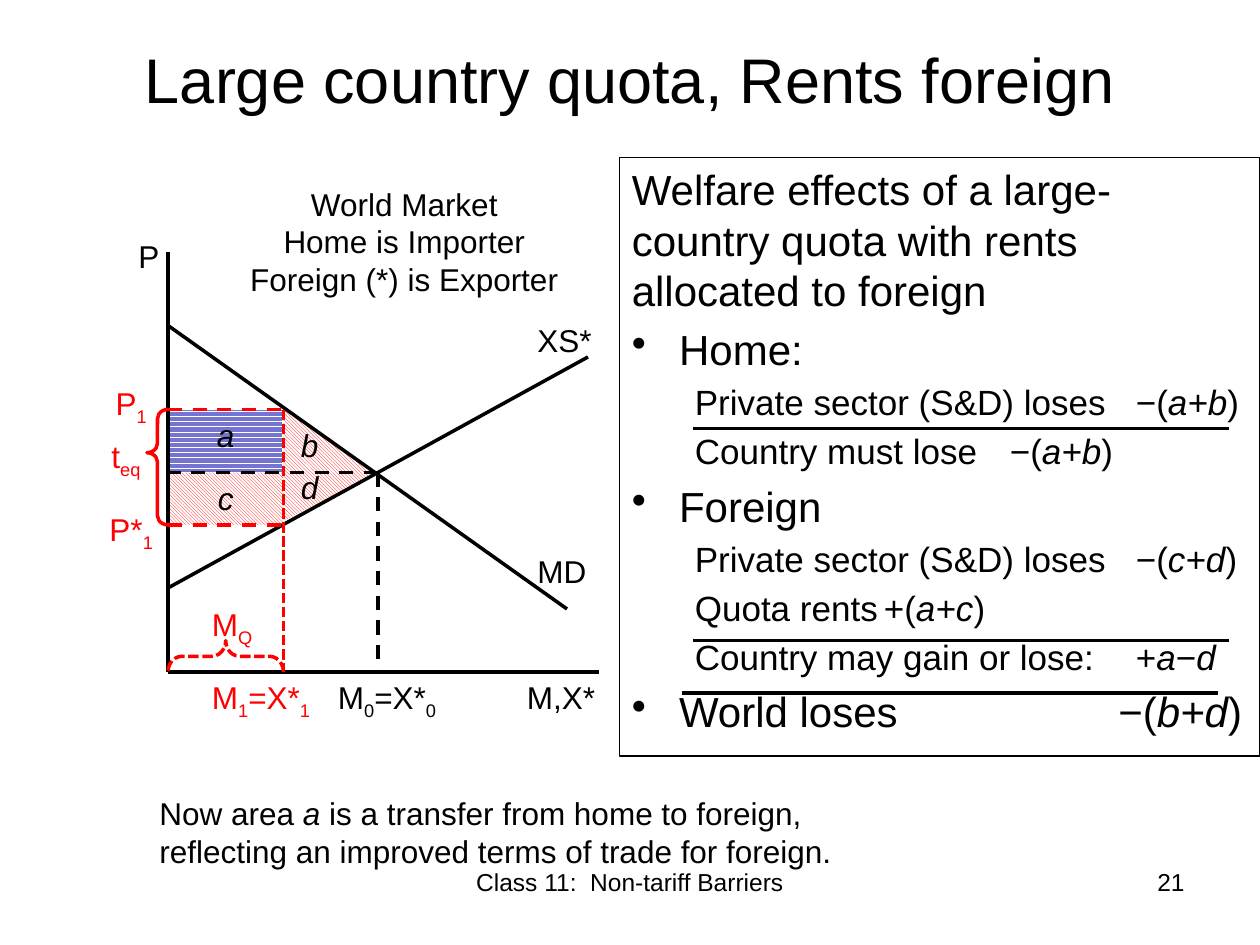
import pptx
import pptx.dml.color
import pptx.enum.dml
import pptx.enum.shapes
import pptx.enum.text
import pptx.oxml.ns
import pptx.util
from lxml import etree

Pt = pptx.util.Pt
RGBColor = pptx.dml.color.RGBColor
SHAPE = pptx.enum.shapes.MSO_SHAPE
DASH = pptx.enum.dml.MSO_LINE
PATTERN = pptx.enum.dml.MSO_PATTERN
ALIGN = pptx.enum.text.PP_ALIGN
ANCHOR = pptx.enum.text.MSO_ANCHOR
qn = pptx.oxml.ns.qn

BLACK = RGBColor(0x00, 0x00, 0x00)
WHITE = RGBColor(0xFF, 0xFF, 0xFF)
RED = RGBColor(0xFF, 0x00, 0x00)
BLUE = RGBColor(0x75, 0x75, 0xD1)

# Points shared by the lines, areas and labels of the diagram
AXIS_X, AXIS_Y = 96, 384
QUOTA_X, FREE_X = 162, 216
HOME_PRICE, FREE_PRICE, FOREIGN_PRICE = 234, 270, 300


def italic(text):
    return text, {"italic": True}


def sub(text):
    return text, {"baseline": "-25000"}


def set_all(target, values):
    for name, value in values.items():
        setattr(target, name, value)


class SlideBuilder:
    font = "Arial"
    line_width = Pt(2)

    def __init__(self, deck):
        self.page = deck.slides.add_slide(deck.slide_layouts[5])

    def add_spans(self, para, spans, size=18, color=BLACK, align=ALIGN.LEFT):
        para.alignment = align
        for item in spans:
            text, extra = (item, {}) if isinstance(item, str) else item
            span = para.add_run()
            span.text = text
            set_all(span.font, {"name": self.font, "size": Pt(size),
                                "italic": extra.get("italic", False)})
            span.font.color.rgb = color
            if "baseline" in extra:
                span._r.get_or_add_rPr().set("baseline", extra["baseline"])

    def title(self, text, left, top, width, height):
        box = self.page.shapes.title
        set_all(box, {"left": Pt(left), "top": Pt(top),
                      "width": Pt(width), "height": Pt(height)})
        set_all(box.text_frame, {"vertical_anchor": ANCHOR.MIDDLE, "word_wrap": True})
        self.add_spans(box.text_frame.paragraphs[0], [text], 36, align=ALIGN.CENTER)

    def text(self, left, top, width, height, *paragraphs, **style):
        box = self.page.shapes.add_textbox(Pt(left), Pt(top), Pt(width), Pt(height))
        frame = box.text_frame
        frame.word_wrap = True
        for index, spans in enumerate(paragraphs):
            para = frame.add_paragraph() if index else frame.paragraphs[0]
            self.add_spans(para, spans, **style)
        return box

    def area(self, kind, left, top, right, bottom, pattern, color, flip=False):
        shape = self.shape(kind, left, top, right - left, bottom - top, flip)
        shape.fill.patterned()
        shape.fill.pattern = pattern
        shape.fill.fore_color.rgb = color
        shape.fill.back_color.rgb = WHITE
        shape.line.fill.background()

    def brace(self, left, top, width, height, point, rotation=0, dash=None):
        shape = self.shape(SHAPE.LEFT_BRACE, left, top, width, height, flip=True)
        shape.rotation = rotation
        shape.adjustments[0] = 0.44
        shape.adjustments[1] = point
        shape.fill.background()
        self.stroke(shape.line, RED, dash)

    def shape(self, kind, left, top, width, height, flip=False):
        shape = self.page.shapes.add_shape(kind, Pt(left), Pt(top), Pt(width), Pt(height))
        shape.shadow.inherit = False
        if flip:
            shape._element.spPr.find(qn("a:xfrm")).set("flipV", "1")
        return shape

    def stroke(self, line, color, dash):
        set_all(line, {"width": self.line_width, "dash_style": dash})
        line.color.rgb = color

    def line(self, x1, y1, x2, y2, color=BLACK, dash=None):
        connector = self.page.shapes.add_connector(
            pptx.enum.shapes.MSO_CONNECTOR.STRAIGHT, Pt(x1), Pt(y1), Pt(x2), Pt(y2))
        self.stroke(connector.line, color, dash)
        etree.SubElement(connector._element.spPr, qn("a:effectLst"))

    def welfare_list(self, left, top, width, height, rows):
        # Kind of row: size, left margin, first-line indent, tab stop, bullet
        kinds = {"intro": (24, 0, 0, None, False),
                 "bullet": (24, 27, -27, 278, True),
                 "entry": (20, 36, 0, 284, False)}
        box = self.text(left, top, width, height)
        box.line.color.rgb = BLACK
        box.line.width = Pt(0.75)
        for index, (kind, *spans) in enumerate(rows):
            size, margin, indent, tab, bullet = kinds[kind]
            frame = box.text_frame
            para = frame.add_paragraph() if index else frame.paragraphs[0]
            para.space_before = Pt(size * 0.2)
            self.add_spans(para, spans, size)
            props = para._p.get_or_add_pPr()
            props.set("marL", str(Pt(margin)))
            props.set("indent", str(Pt(indent)))
            if bullet:
                etree.SubElement(props, qn("a:buChar"), char="•")
            if tab:
                tabs = etree.SubElement(props, qn("a:tabLst"))
                etree.SubElement(tabs, qn("a:tab"), pos=str(Pt(tab)), algn="l")


def main():
    deck = pptx.Presentation()
    set_all(deck, {"slide_width": Pt(720), "slide_height": Pt(540)})
    slide = SlideBuilder(deck)
    slide.title("Large country quota, Rents foreign", 36, 0, 648, 90)

    # Welfare areas
    hatch = PATTERN.DARK_DOWNWARD_DIAGONAL
    slide.area(SHAPE.RECTANGLE, AXIS_X, FREE_PRICE, QUOTA_X, FOREIGN_PRICE, hatch, RED)
    slide.area(SHAPE.RECTANGLE, AXIS_X, HOME_PRICE, QUOTA_X - 1, FREE_PRICE,
               PATTERN.DARK_HORIZONTAL, BLUE)
    slide.area(SHAPE.RIGHT_TRIANGLE, QUOTA_X, FREE_PRICE, FREE_X, FOREIGN_PRICE - 2,
               hatch, RED, flip=True)
    slide.area(SHAPE.RIGHT_TRIANGLE, QUOTA_X, HOME_PRICE, FREE_X, FREE_PRICE, hatch, RED)

    # Axes, supply and demand
    slide.line(AXIS_X, AXIS_Y, 342, AXIS_Y)
    slide.line(AXIS_X, AXIS_Y, AXIS_X, 144)
    slide.line(AXIS_X, 336, 336, 204)
    slide.line(324, 348, AXIS_X, 186)

    # Free-trade and quota guides
    slide.line(FREE_X, FREE_PRICE, FREE_X, AXIS_Y, dash=DASH.DASH)
    slide.line(FREE_X, FREE_PRICE, AXIS_X, FREE_PRICE, dash=DASH.DASH)
    slide.line(QUOTA_X, HOME_PRICE, QUOTA_X, AXIS_Y, RED, DASH.SQUARE_DOT)
    for price in (HOME_PRICE, FOREIGN_PRICE):
        slide.line(AXIS_X, price, QUOTA_X, price, RED, DASH.DASH)
    slide.brace(84, HOME_PRICE, 12, 66, 0.625)
    slide.brace(120, 342, 18, 66, 0.5, rotation=90, dash=DASH.SQUARE_DOT)

    # Black labels
    for left, top, label in ((72, 132, "P"), (300, 312, "MD"),
                             (300, 180, "XS*"), (294, 384, "M,X*")):
        slide.text(left, top, 54, 29, [label])
    slide.text(114, 102, 234, 73, ["World Market"], ["Home is Importer"],
               ["Foreign (*) is Exporter"], align=ALIGN.CENTER)
    for left, top, letter in ((114, 234, "a"), (162, 240, "b"),
                              (114, 270, "c"), (162, 264, "d")):
        slide.text(left, top, 30, 29, [italic(letter)], align=ALIGN.CENTER)

    # Price and quantity labels with subscripts
    for left, top, width, letter, index in ((54, 216, 42, "P", "1"),
                                            (54, 288, 42, "P*", "1"),
                                            (48, 246, 48, "t", "eq")):
        slide.text(left, top, width, 29, [letter, sub(index)], color=RED, align=ALIGN.CENTER)
    slide.text(114, 342, 72, 29, ["M", sub("Q")], color=RED)
    for left, index, color in ((114, "1", RED), (186, "0", BLACK)):
        slide.text(left, 384, 78, 29, ["M", sub(index), "=X*", sub(index)], color=color)

    # Welfare effects, with the lines above the totals
    slide.welfare_list(354, 90, 366, 342, [
        ("intro", "Welfare effects of a large-country quota with rents allocated to foreign"),
        ("bullet", "Home:"),
        ("entry", "Private sector (S&D) loses\t−(", italic("a+b"), ")"),
        ("entry", "Country must lose\t−(", italic("a+b"), ")"),
        ("bullet", "Foreign"),
        ("entry", "Private sector (S&D) loses\t−(", italic("c+d"), ")"),
        ("entry", "Quota rents\t+(", italic("a+c"), ")"),
        ("entry", "Country may gain or lose:\t+", italic("a"), "−", italic("d")),
        ("bullet", "World loses\t−(", italic("b+d"), ")"),
    ])
    for left, top in ((396, 244.8), (396, 366), (390, 396)):
        slide.line(left, top, left + 306, top)

    # Conclusion and footer
    slide.text(84, 450, 438, 51, [
        "Now area ", italic("a"), " is a transfer from home to foreign, "
        "reflecting an improved terms of trade for foreign."])
    slide.text(246, 492, 228, 37, ["Class 11:  Non-tariff Barriers"], size=14,
               align=ALIGN.CENTER)
    slide.text(516, 492, 168, 37, ["21"], size=14, align=ALIGN.RIGHT)

    deck.save("out.pptx")


if __name__ == "__main__":
    main()
